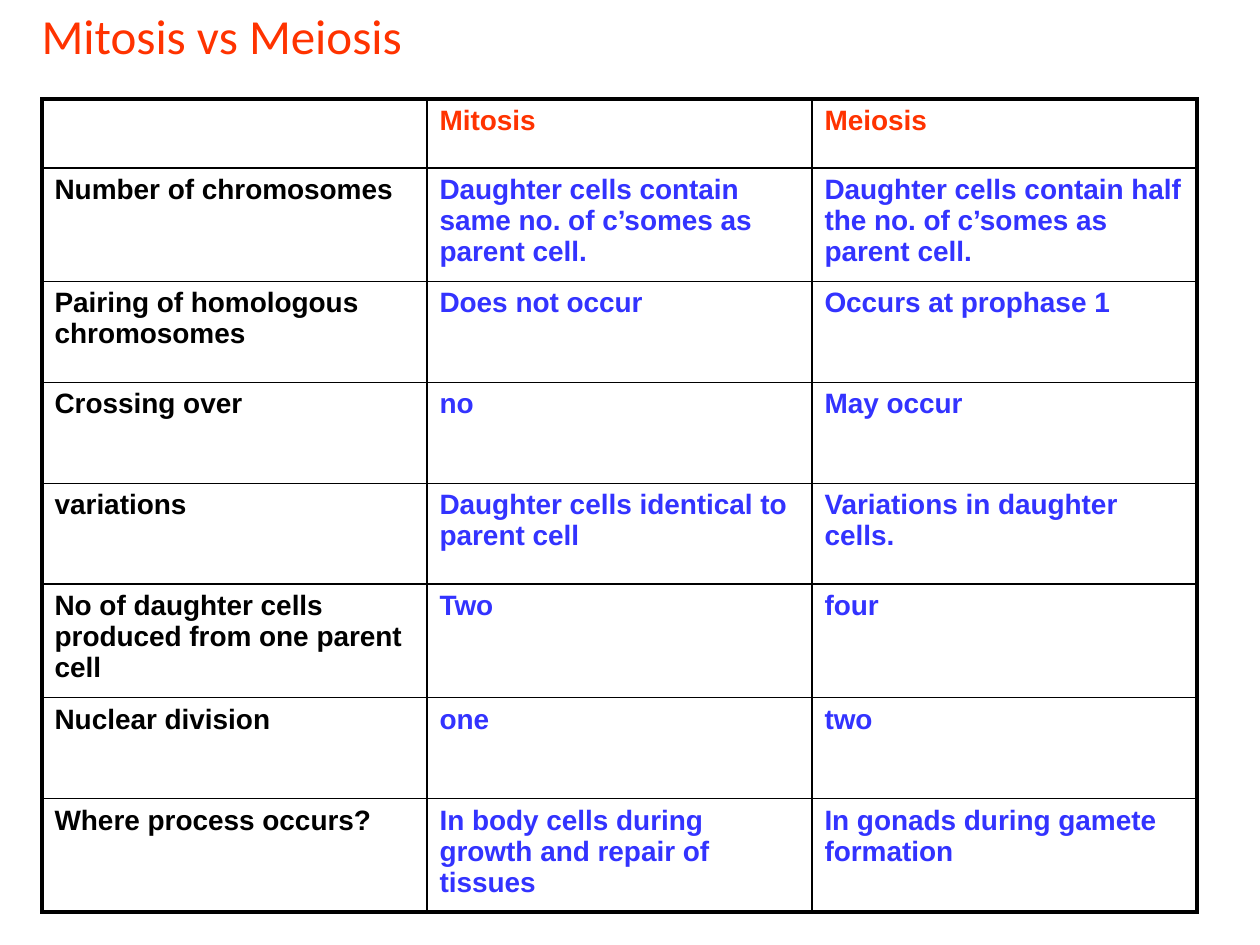
from dataclasses import dataclass

from lxml.etree import SubElement
from pptx import Presentation
from pptx.dml.color import RGBColor as Rgb
from pptx.enum.text import MSO_ANCHOR as Anchor, MSO_AUTO_SIZE as AutoSize, PP_ALIGN as Align
from pptx.oxml.ns import qn
from pptx.util import Emu, Pt

PX = 914400 // 126


@dataclass(frozen=True)
class Theme:
    title_font: str = "Calibri"
    table_font: str = "Arial"
    accent: str = "FF3300"
    label: str = "000000"
    answer: str = "3333FF"
    border: str = "000000"
    title_size: float = 28
    table_size: float = 16
    space_before: float = 3.2
    outer_line: float = 2.25
    inner_line: float = 1


THEME = Theme()
TITLE = "Mitosis vs Meiosis"
ROWS = [
    ("", "Mitosis", "Meiosis"),
    ("Number of chromosomes",
     "Daughter cells contain same no. of c’somes as parent cell.",
     "Daughter cells contain half the no. of c’somes as parent cell."),
    ("Pairing of homologous chromosomes", "Does not occur", "Occurs at prophase 1"),
    ("Crossing over", "no", "May occur"),
    ("variations", "Daughter cells identical to parent cell", "Variations in daughter cells."),
    ("No of daughter cells produced from one parent cell", "Two", "four"),
    ("Nuclear division", "one", "two"),
    ("Where process occurs?",
     "In body cells during growth and repair of tissues",
     "In gonads during gamete formation"),
]


def px(length):
    return Emu(length * PX)


def format_runs(para, font, size, color, bold=False):
    for span in para.runs:
        span.font.name = font
        span.font.size = Pt(size)
        span.font.bold = bold
        span.font.color.rgb = Rgb.from_string(color)


def add_title(page, left, top, width, height):
    box = page.shapes.title
    box.left, box.top, box.width, box.height = map(px, (left, top, width, height))
    frame = box.text_frame
    frame.text = TITLE
    frame.word_wrap = False
    frame.auto_size = AutoSize.SHAPE_TO_FIT_TEXT
    frame.vertical_anchor = Anchor.TOP
    para = frame.paragraphs[0]
    para.alignment = Align.LEFT
    format_runs(para, THEME.title_font, THEME.title_size, THEME.accent)


def set_borders(cell, outer_sides):
    """Draw all four sides, with the heavy line on the table's outside."""
    properties = cell._tc.get_or_add_tcPr()
    for side, is_outer in outer_sides.items():
        width = THEME.outer_line if is_outer else THEME.inner_line
        line = SubElement(properties, qn(f"a:ln{side}"), w=str(Pt(width)))
        fill = SubElement(line, qn("a:solidFill"))
        SubElement(fill, qn("a:srgbClr"), val=THEME.border)


def text_color(row, column):
    if row == 0:
        return THEME.accent
    return THEME.label if column == 0 else THEME.answer


def add_comparison(page, left, top, width, height, header_height, row_height):
    last_row, last_column = len(ROWS) - 1, len(ROWS[0]) - 1
    holder = page.shapes.add_table(
        last_row + 1, last_column + 1, px(left), px(top), px(width), px(height))
    table = holder.table
    table.first_row = table.horz_banding = False
    for index, row in enumerate(table.rows):
        row.height = px(row_height if index else header_height)
    holder.height = px(height)

    for r, texts in enumerate(ROWS):
        for c, text in enumerate(texts):
            cell = table.cell(r, c)
            set_borders(cell, {"L": c == 0, "R": c == last_column,
                               "T": r == 0, "B": r == last_row})
            cell.fill.background()
            if text:
                para = cell.text_frame.paragraphs[0]
                para.text = text
                para.space_before = Pt(THEME.space_before)
                format_runs(para, THEME.table_font, THEME.table_size, text_color(r, c), bold=True)


def main():
    deck = Presentation()
    deck.slide_width, deck.slide_height = px(1260), px(945)
    page = deck.slides.add_slide(deck.slide_layouts[5])
    add_title(page, 29, -1, 421, 72)
    add_comparison(page, 42, 99, 1155, 818, header_height=69, row_height=101)
    deck.save("out.pptx")


if __name__ == "__main__":
    main()
